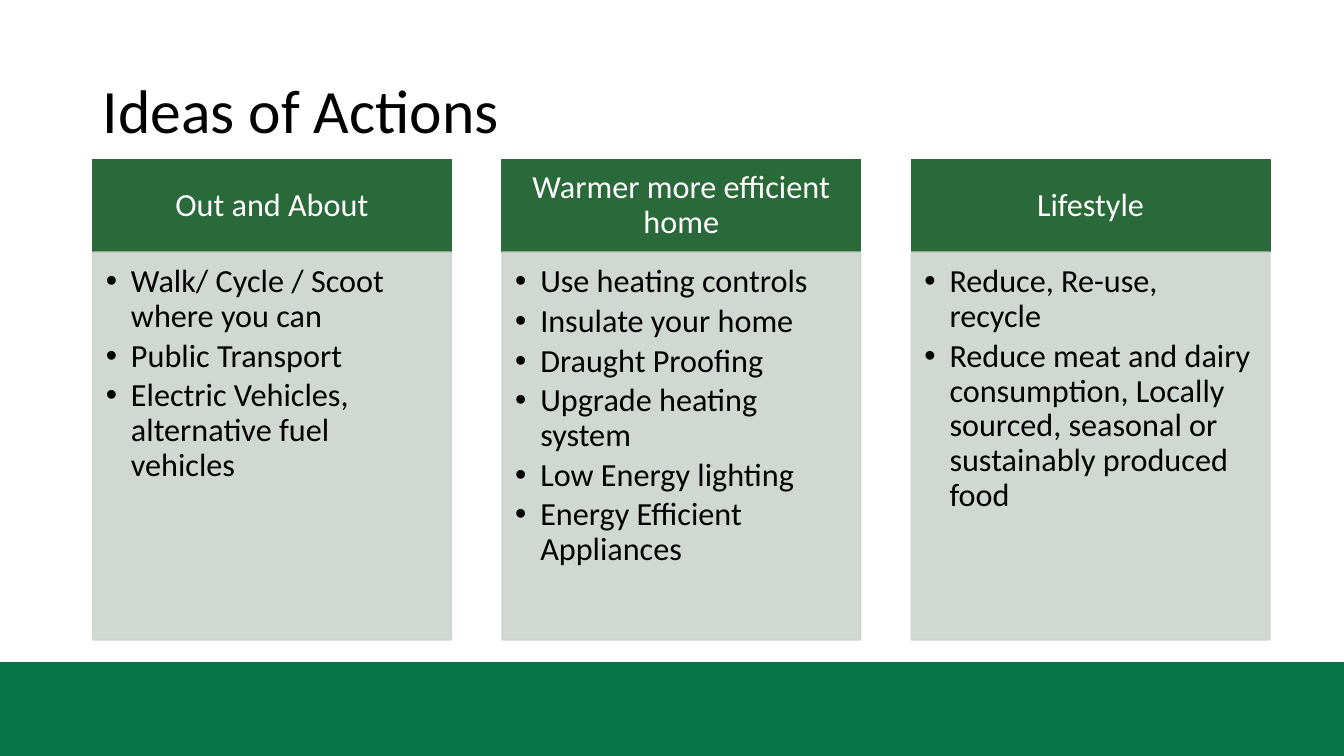
import dataclasses

import pptx
import pptx.dml.color
import pptx.enum.shapes
import pptx.enum.text
import pptx.oxml
import pptx.oxml.ns
import pptx.util

Inches = pptx.util.Inches
Pt = pptx.util.Pt
Align = pptx.enum.text.PP_ALIGN
Anchor = pptx.enum.text.MSO_ANCHOR


@dataclasses.dataclass(frozen=True)
class Theme:
    font: str = "Calibri"
    title_size: float = 44
    text_size: float = 23
    line_spacing: float = 0.9
    list_gap: float = 3.5
    ink: str = "000000"
    light: str = "FFFFFF"
    footer: str = "07744A"
    header: str = "29693A"
    panel: str = "CDD4CE"
    panel_opacity: int = 90


# Percentages of the slide's width or height
MARGIN_LEFT, COLUMN_WIDTH, COLUMN_PITCH = 6.9, 26.7, 30.45
HEADER_TOP, HEADER_HEIGHT, LIST_HEIGHT = 21.07, 12.27, 51.33
FOOTER_TOP = 87.6

ACTIONS = {
    "Out and About": [
        "Walk/ Cycle / Scoot where you can",
        "Public Transport",
        "Electric Vehicles, alternative fuel vehicles",
    ],
    "Warmer more efficient home": [
        "Use heating controls",
        "Insulate your home",
        "Draught Proofing",
        "Upgrade heating system",
        "Low Energy lighting",
        "Energy Efficient Appliances",
    ],
    "Lifestyle": [
        "Reduce, Re-use, recycle",
        "Reduce meat and dairy consumption, Locally sourced, seasonal or "
        "sustainably produced food",
    ],
}


def element(tag, **attributes):
    node = pptx.oxml.parse_xml(f"<{tag} {pptx.oxml.ns.nsdecls('a')}/>")
    for name, value in attributes.items():
        node.set(name, str(value))
    return node


class ActionsPage:
    def __init__(self, deck, theme):
        self.deck = deck
        self.theme = theme
        self.page = deck.slides.add_slide(deck.slide_layouts[6])

    def area(self, left, top, width, height):
        """Turn percentages of the slide into lengths."""
        across, down = self.deck.slide_width, self.deck.slide_height
        return [round(share * side / 100) for share, side in
                zip((left, top, width, height), (across, down, across, down))]

    def rectangle(self, area, color, opacity=100, outlined=True):
        box = self.page.shapes.add_shape(
            pptx.enum.shapes.MSO_SHAPE.RECTANGLE, *self.area(*area))
        box.shadow.inherit = False
        paints = [box.fill]
        if outlined:
            box.line.width = Pt(1)
            paints.append(box.line.fill)
        else:
            box.line.fill.background()
        for paint in paints:
            paint.solid()
            paint.fore_color.rgb = pptx.dml.color.RGBColor.from_string(color)
        if opacity < 100:
            for node in box.element.spPr.iter(pptx.oxml.ns.qn("a:srgbClr")):
                node.append(element("a:alpha", val=opacity * 1000))
        return box

    def set_text(self, box, lines, size, color, align=Align.LEFT,
                 anchor=Anchor.MIDDLE, insets=(0.1, 0.05, 0.1, 0.05),
                 bulleted=False):
        frame = box.text_frame
        frame.text = "\n".join(lines)
        frame.word_wrap = True
        frame.vertical_anchor = anchor
        (frame.margin_left, frame.margin_top,
         frame.margin_right, frame.margin_bottom) = map(Inches, insets)
        for para in frame.paragraphs:
            para.alignment = align
            para.line_spacing = self.theme.line_spacing
            if bulleted:
                self.bullet(para)
            for span in para.runs:
                span.font.name = self.theme.font
                span.font.size = Pt(size)
                span.font.color.rgb = pptx.dml.color.RGBColor.from_string(color)

    def bullet(self, para):
        para.space_after = Pt(self.theme.list_gap)
        properties = para._p.get_or_add_pPr()
        properties.set("marL", str(Inches(0.25)))
        properties.set("indent", str(-Inches(0.25)))
        properties.append(element("a:buFont", typeface="Arial"))
        properties.append(element("a:buChar", char="•"))

    def footer(self):
        self.rectangle((0, FOOTER_TOP, 100, 100 - FOOTER_TOP),
                       self.theme.footer, outlined=False)

    def title(self, text):
        box = self.page.shapes.add_textbox(
            *self.area(MARGIN_LEFT, 5.33, 86.25, 19.33))
        self.set_text(box, [text], self.theme.title_size, self.theme.ink)

    def column(self, index, heading, actions):
        left = MARGIN_LEFT + index * COLUMN_PITCH
        header = self.rectangle(
            (left, HEADER_TOP, COLUMN_WIDTH, HEADER_HEIGHT), self.theme.header)
        self.set_text(header, [heading], self.theme.text_size, self.theme.light,
                      align=Align.CENTER, insets=(0.18, 0.1, 0.18, 0.1))
        panel = self.rectangle(
            (left, HEADER_TOP + HEADER_HEIGHT, COLUMN_WIDTH, LIST_HEIGHT),
            self.theme.panel, self.theme.panel_opacity)
        self.set_text(panel, actions, self.theme.text_size, self.theme.ink,
                      anchor=Anchor.TOP, insets=(0.13, 0.13, 0.18, 0.2),
                      bulleted=True)


def main():
    deck = pptx.Presentation()
    deck.slide_width, deck.slide_height = Inches(13.33), Inches(7.5)
    page = ActionsPage(deck, Theme())
    page.footer()
    page.title("Ideas of Actions")
    for index, (heading, actions) in enumerate(ACTIONS.items()):
        page.column(index, heading, actions)
    deck.save("out.pptx")


if __name__ == "__main__":
    main()
